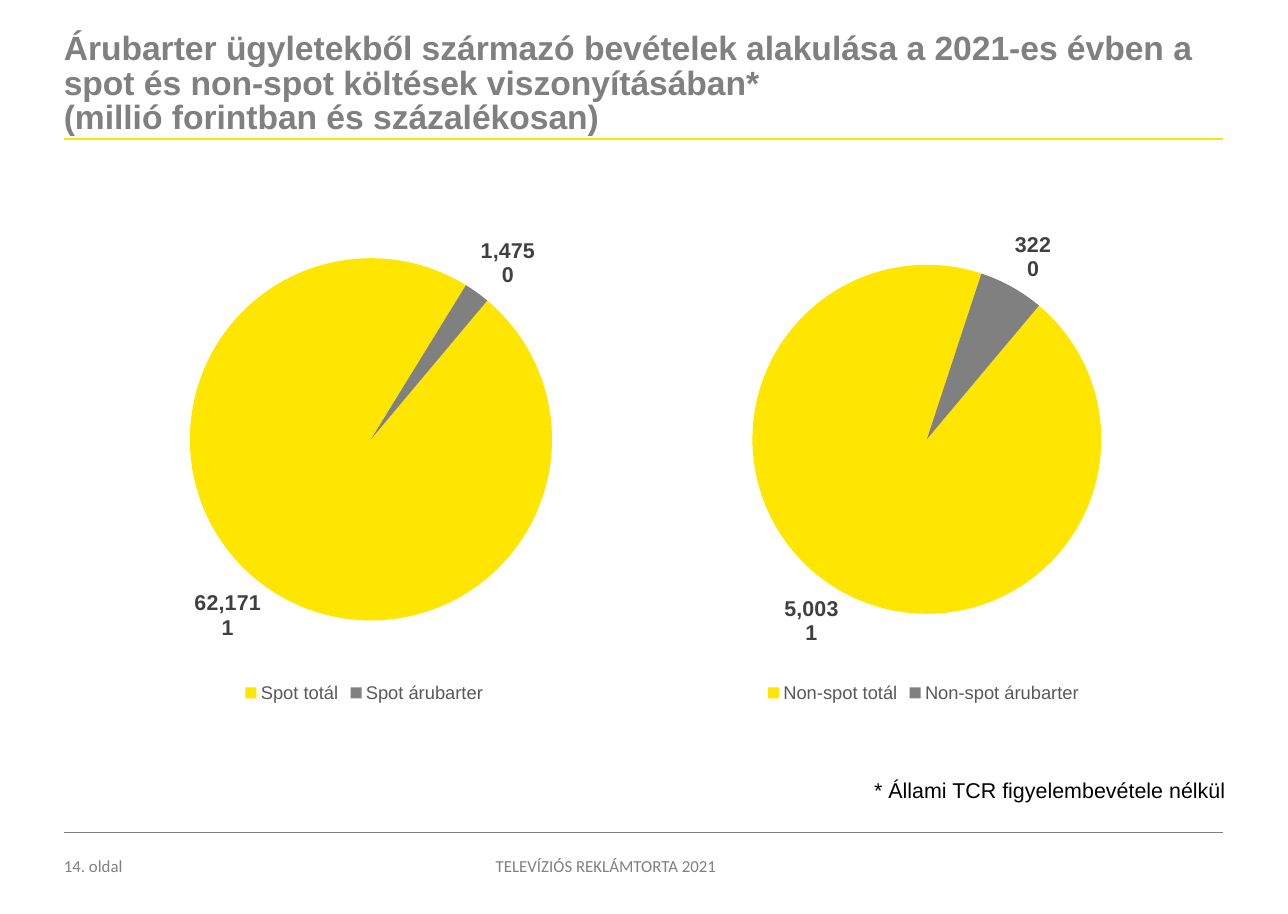
from lxml import etree
from pptx import Presentation
from pptx import util as u
from pptx.chart import data as chart_data
from pptx.dml import color
from pptx.enum import chart as ch, shapes, text
from pptx.oxml import ns

THEME = {
    "yellow": "FFE600", "grey": "808080", "black": "000000",
    "label": "404040", "legend": "595959",
    "font": "Arial", "footer_font": "Calibri",
    "title_size": 22, "note_size": 14, "footer_size": 11,
    "label_size": 14, "legend_size": 12,
}
TITLE = """Árubarter ügyletekből származó bevételek alakulása a 2021-es évben a spot és non-spot költések viszonyításában*
(millió forintban és százalékosan)"""
NOTE = "* Állami TCR figyelembevétele nélkül"
PAGE_LABEL = "14. oldal"
FOOTER = "TELEVÍZIÓS REKLÁMTORTA 2021"
PIES = [
    {"values": {"Spot totál": 62171, "Spot árubarter": 1475},
     "left": 0.75, "center": 3.37, "diameter": 3.29},
    {"values": {"Non-spot totál": 5003, "Non-spot árubarter": 322},
     "left": 5.83, "center": 8.42, "diameter": 3.17},
]
MARGIN, CONTENT_WIDTH = 0.58, 10.53
RULES = [(1.26, "yellow", 1.5), (7.56, "grey", 0.25)]
CHART_TOP, CHART_WIDTH, CHART_HEIGHT = 1.89, 5.12, 4.53
PIE_CENTER_Y, START_ANGLE = 3.99, 40


def rgb(name):
    return color.RGBColor.from_string(THEME[name])


def style_font(font, size, ink, face="font", bold=False):
    font.name = THEME[face]
    font.size = u.Pt(THEME[size])
    font.color.rgb = rgb(ink)
    font.bold = bold


def add_text(slide, content, box, size, ink, face="font", bold=False,
             align=text.PP_ALIGN.LEFT, anchor=text.MSO_ANCHOR.TOP,
             spacing=1.0, inset_top=0):
    frame = slide.shapes.add_textbox(*map(u.Inches, box)).text_frame
    frame.word_wrap = True
    frame.vertical_anchor = anchor
    frame.margin_left = frame.margin_right = frame.margin_bottom = 0
    frame.margin_top = u.Inches(inset_top)
    paragraph = frame.paragraphs[0]
    paragraph.text = content
    paragraph.alignment = align
    paragraph.line_spacing = spacing
    for run in paragraph.runs:
        style_font(run.font, size, ink, face, bold)


def add_rule(slide, top, ink, width):
    line = slide.shapes.add_connector(
        shapes.MSO_CONNECTOR.STRAIGHT, u.Inches(MARGIN), u.Inches(top),
        u.Inches(MARGIN + CONTENT_WIDTH), u.Inches(top))
    line.line.color.rgb = rgb(ink)
    line.line.width = u.Pt(width)
    etree.SubElement(line._element.spPr, ns.qn("a:effectLst"))


def set_pie_layout(chart, pie):
    plot_area = chart._chartSpace.chart.plotArea
    layout = plot_area.find(ns.qn("c:layout"))
    if layout is None:
        layout = etree.Element(ns.qn("c:layout"))
        plot_area.insert(0, layout)
    radius = pie["diameter"] / 2
    manual = etree.SubElement(layout, ns.qn("c:manualLayout"))
    settings = {
        "layoutTarget": "inner", "xMode": "edge", "yMode": "edge",
        "x": (pie["center"] - radius - pie["left"]) / CHART_WIDTH,
        "y": (PIE_CENTER_Y - radius - CHART_TOP) / CHART_HEIGHT,
        "w": pie["diameter"] / CHART_WIDTH,
        "h": pie["diameter"] / CHART_HEIGHT,
    }
    for tag, value in settings.items():
        etree.SubElement(manual, ns.qn("c:" + tag)).set("val", str(value))
    plot = plot_area.find(ns.qn("c:pieChart"))
    angle = plot.find(ns.qn("c:firstSliceAng"))
    if angle is None:
        angle = etree.SubElement(plot, ns.qn("c:firstSliceAng"))
    angle.set("val", str(START_ANGLE))


def add_pie(slide, pie):
    values = chart_data.CategoryChartData(number_format="#,##0")
    values.categories = list(pie["values"])
    values.add_series("Series 1", list(pie["values"].values()))
    chart = slide.shapes.add_chart(
        ch.XL_CHART_TYPE.PIE, u.Inches(pie["left"]), u.Inches(CHART_TOP),
        u.Inches(CHART_WIDTH), u.Inches(CHART_HEIGHT), values).chart
    style_font(chart.font, "legend_size", "black")
    chart.has_title = False
    chart.has_legend = True
    chart.legend.position = ch.XL_LEGEND_POSITION.BOTTOM
    chart.legend.include_in_layout = False
    style_font(chart.legend.font, "legend_size", "legend")

    plot = chart.plots[0]
    plot.vary_by_categories = True
    series = plot.series[0]
    for index, ink in enumerate(("yellow", "grey")):
        fill = series.points[index].format.fill
        fill.solid()
        fill.fore_color.rgb = rgb(ink)

    labels = series.data_labels
    style_font(labels.font, "label_size", "label", bold=True)
    labels.number_format = "#,##0"
    labels.number_format_is_linked = False
    labels.position = ch.XL_LABEL_POSITION.OUTSIDE_END
    labels.show_value = True
    labels.show_percentage = True
    separator = etree.Element(ns.qn("c:separator"))
    separator.text = "\n"
    labels._element.find(ns.qn("c:showBubbleSize")).addnext(separator)
    set_pie_layout(chart, pie)


def main():
    presentation = Presentation()
    presentation.slide_width = u.Inches(11.7)
    presentation.slide_height = u.Inches(8.3)
    slide = presentation.slides.add_slide(presentation.slide_layouts[6])
    for rule in RULES:
        add_rule(slide, *rule)
    add_text(slide, TITLE, (MARGIN, 0.3, CONTENT_WIDTH, 0.94), "title_size",
             "grey", bold=True, anchor=text.MSO_ANCHOR.MIDDLE, spacing=0.85)
    add_text(slide, PAGE_LABEL, (MARGIN, 7.77, 0.85, 0.24), "footer_size",
             "grey", "footer_font")
    add_text(slide, FOOTER, (3.31, 7.77, 4.39, 0.24), "footer_size",
             "grey", "footer_font", align=text.PP_ALIGN.CENTER)
    add_text(slide, NOTE, (7.94, 7.05, 3.38, 0.24), "note_size", "black",
             spacing=0.85, inset_top=0.04)
    for pie in PIES:
        add_pie(slide, pie)
    presentation.save("out.pptx")


if __name__ == "__main__":
    main()
